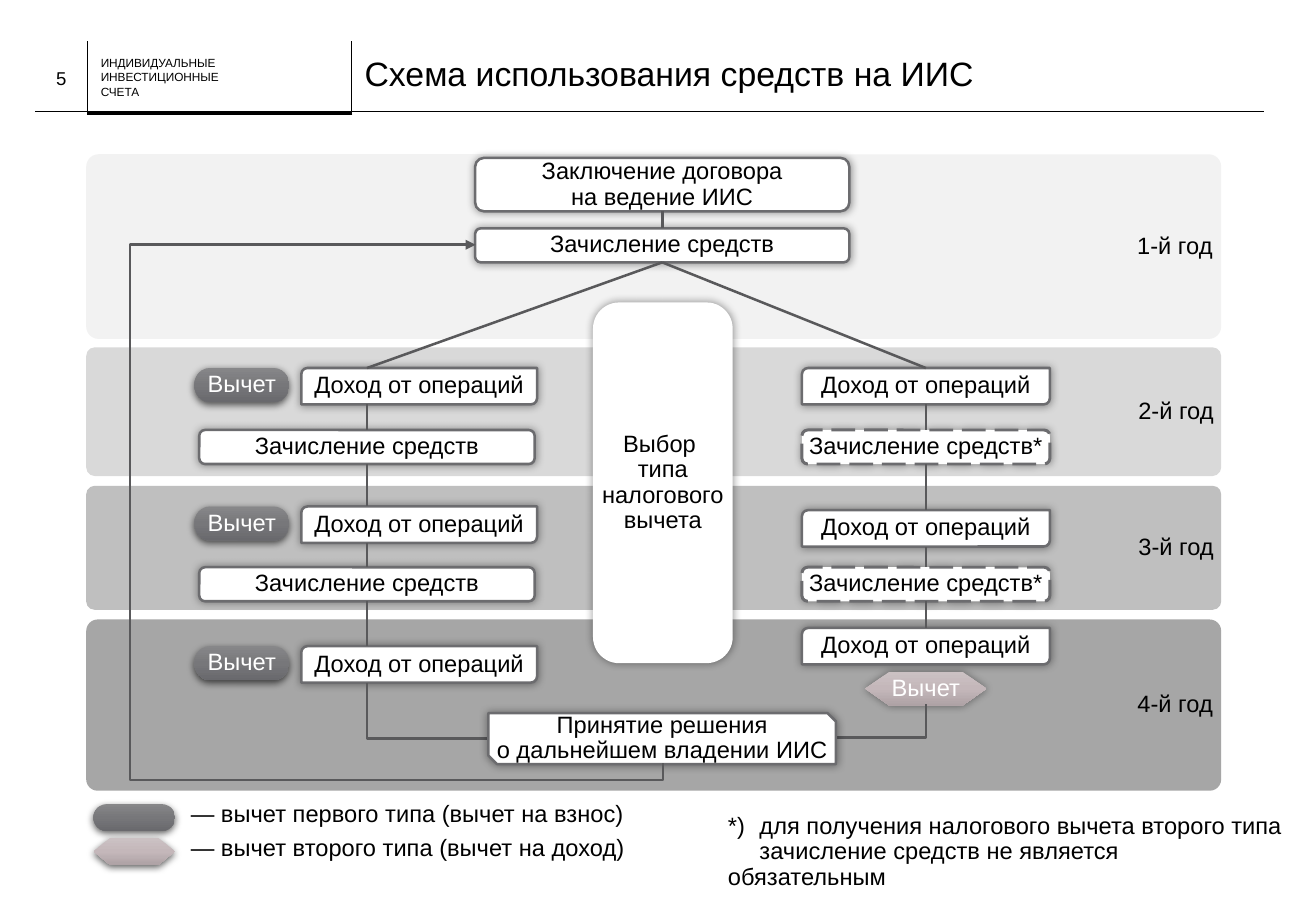
from lxml import etree
from pptx import Presentation
from pptx import util as u
from pptx.dml.color import RGBColor
from pptx.enum import dml, shapes, text
from pptx.oxml.ns import qn

SCALE = 9144
FORM = shapes.MSO_SHAPE
BLACK, WHITE = "000000", "FFFFFF"
BORDER, WIRE = "6C6C6F", "59595B"
FIRST_TYPE = ("878789", "77777A", "69696D")
SECOND_TYPE = ("CBC1C3", "C4B7BA", "AEA2A5")
GLOW = (40, 5, 0, 0)
DROP = (63, 4.5, 1.5, 90)
INCOME, DEPOSIT, DEDUCTION = "Доход от операций", "Зачисление средств", "Вычет"


def px(*lengths):
    """Turn px into EMU."""
    return [u.Emu(length * SCALE) for length in lengths]


def color(hex_code):
    """Return the colour for a hex string."""
    return RGBColor.from_string(hex_code)


def child(parent, tag, **attributes):
    """Append a DrawingML element with the given attributes."""
    values = {key: str(value) for key, value in attributes.items()}
    return etree.SubElement(parent, qn(tag), values)


def write(holder, words, size=14, ink=BLACK, align="CENTER", anchor="MIDDLE",
          spacing=0.9, inset=0, tab=None):
    """Fill a shape with one formatted paragraph."""
    frame = holder.text_frame
    frame.word_wrap = True
    frame.auto_size = text.MSO_AUTO_SIZE.NONE
    frame.vertical_anchor = getattr(text.MSO_ANCHOR, anchor)
    frame.margin_left, frame.margin_right = px(inset, inset)
    frame.margin_top = frame.margin_bottom = 0
    line = frame.paragraphs[0]
    line.text = words
    line.alignment = getattr(text.PP_ALIGN, align)
    line.line_spacing = spacing
    for run in line.runs:
        run.font.size = u.Pt(size)
        run.font.name = "Arial"
        run.font.color.rgb = color(ink)
    for line_break in line._p.findall(qn("a:br")):
        child(line_break, "a:rPr", sz=size * 100)
    if tab:
        stops = child(line._p.get_or_add_pPr(), "a:tabLst")
        child(stops, "a:tab", pos=tab * SCALE, algn="l")


def label(slide, box, words, **style):
    """Add a text box."""
    write(slide.shapes.add_textbox(*px(*box)), words, **style)


def cast_shadow(block, alpha, blur, distance, angle):
    """Give a block an outer shadow."""
    effects = block._element.spPr.find(qn("a:effectLst"))
    outer = child(effects, "a:outerShdw", blurRad=u.Pt(blur), dist=u.Pt(distance),
                  dir=angle * 60000, algn="ctr", rotWithShape=0)
    child(child(outer, "a:srgbClr", val=BLACK), "a:alpha", val=alpha * 1000)


def add_block(slide, form, box, fill=WHITE, border=None, shadow=None, corner=None):
    """Add a preset shape with a plain fill or a vertical gradient."""
    block = slide.shapes.add_shape(form, *px(*box))
    block.shadow.inherit = False
    if corner:
        block.adjustments[0] = corner
    if isinstance(fill, str):
        block.fill.solid()
        block.fill.fore_color.rgb = color(fill)
    else:
        block.fill.gradient()
        block.fill.gradient_angle = 270
        stops = block._element.spPr.find(".//" + qn("a:gsLst"))
        stops.clear()
        for index, shade in enumerate(fill):
            stop = child(stops, "a:gs", pos=index * 50000)
            child(stop, "a:srgbClr", val=shade)
    if border:
        block.line.color.rgb = color(border)
        block.line.width = u.Pt(1.5)
    else:
        block.line.fill.background()
    if shadow:
        cast_shadow(block, *shadow)
    return block


def add_step(slide, form, box, words, dashed=False, inset=0):
    """Add a white outlined step of the scheme."""
    step = add_block(slide, form, box, border=BORDER, shadow=GLOW)
    if dashed:
        step.line.width = u.Pt(1.75)
        step.line.dash_style = dml.MSO_LINE.LONG_DASH
    write(step, words, inset=inset)
    return step


def add_line(slide, ends, ink=WIRE, width=1.5, source=None, target=None,
             kind=shapes.MSO_CONNECTOR.STRAIGHT):
    """Add a connector, joined to the bottom of source and the top of target."""
    wire = slide.shapes.add_connector(kind, *px(*ends))
    wire.line.color.rgb = color(ink)
    wire.line.width = u.Pt(width)
    if source:
        wire.begin_connect(source, 2)
    if target:
        wire.end_connect(target, 0)
    child(wire._element.spPr, "a:effectLst")
    return wire


def add_bend(slide, ends, preset, turn, adjusts=(), arrow=False):
    """Add an elbow connector, its ends given before the turn in degrees."""
    wire = add_line(slide, ends, kind=shapes.MSO_CONNECTOR.ELBOW)
    properties = wire._element.spPr
    properties.find(qn("a:xfrm")).set("rot", str(turn * 60000))
    geometry = properties.find(qn("a:prstGeom"))
    geometry.set("prst", preset)
    guides = geometry.find(qn("a:avLst"))
    for index, value in enumerate(adjusts, 1):
        child(guides, "a:gd", name=f"adj{index}", fmla=f"val {value}")
    if arrow:
        child(properties.find(qn("a:ln")), "a:tailEnd", type="triangle")


def add_header(slide):
    """Set the title, section name, page number and rules."""
    for ends, width in (((72, 92, 29, 92), 0.25), ((290, 93, 72, 93), 2.25),
                        ((1040, 92, 288, 92), 0.25), ((72, 93, 72, 34), 0.25),
                        ((289, 93, 289, 34), 0.25)):
        add_line(slide, ends, ink=BLACK, width=width)
    label(slide, (83, 46, 203, 35), "ИНДИВИДУАЛЬНЫЕ\nИНВЕСТИЦИОННЫЕ\nСЧЕТА",
          size=7, align="LEFT", spacing=1.0)
    label(slide, (29, 44, 43, 40), "5", size=11, spacing=1.0)
    title = slide.shapes.title
    title.left, title.top, title.width, title.height = px(300, 34, 677, 56)
    write(title, "Схема использования средств на ИИС", size=20, align="LEFT")


def add_years(slide):
    """Add the four year bands."""
    bands = ((127, 152, "F2F2F2"), (286, 106, "D9D9D9"),
             (400, 102, "BFBFBF"), (510, 141, "A6A6A6"))
    for year, (top, height, shade) in enumerate(bands, 1):
        band = add_block(slide, FORM.ROUNDED_RECTANGLE, (71, top, 934, height),
                         fill=shade, corner=0.067)
        write(band, f"{year}-й год", align="RIGHT", inset=4)


def add_first_branch(slide, opening):
    """Add the branch with a yearly deduction."""
    deposit = None
    for income_top, deposit_top in ((303, 354), (417, 467), (532, None)):
        badge = add_block(slide, FORM.FLOWCHART_TERMINATOR,
                          (160, income_top, 78, 28), fill=FIRST_TYPE, shadow=DROP)
        write(badge, DEDUCTION, ink=WHITE, inset=2)
        add_step(slide, FORM.ROUND_2_DIAG_RECTANGLE,
                 (248, income_top, 194, 30), INCOME, inset=1)
        add_line(slide, (302, 0, 302, income_top), source=deposit or opening)
        if deposit_top:
            deposit = add_step(slide, FORM.ROUNDED_RECTANGLE,
                               (164, deposit_top, 276, 28), DEPOSIT, inset=2)
            add_line(slide, (302, income_top + 30, 302, 0), target=deposit)
    add_bend(slide, (375, 535, 329, 635), "bentConnector2", 270)


def add_second_branch(slide, opening):
    """Add the branch with one deduction at the end."""
    previous = opening
    for row, top in enumerate((303, 354, 420, 467, 517)):
        if row % 2:
            step = add_step(slide, FORM.ROUNDED_RECTANGLE, (660, top, 204, 28),
                            DEPOSIT + "*", dashed=True, inset=2)
        else:
            step = add_step(slide, FORM.ROUND_2_DIAG_RECTANGLE,
                            (660, top, 204, 30), INCOME, inset=2)
        add_line(slide, (762, 0, 762, top), source=previous, target=step)
        previous = step
    badge = add_block(slide, FORM.FLOWCHART_PREPARATION, (712, 553, 100, 28),
                      fill=SECOND_TYPE, shadow=GLOW)
    write(badge, DEDUCTION, ink=WHITE)
    add_bend(slide, (712, 557, 739, 630), "bentConnector2", 90)


def add_scheme(slide):
    """Add the steps from the contract to the final decision."""
    contract = add_step(slide, FORM.ROUNDED_RECTANGLE, (391, 130, 308, 44),
                        "Заключение договора\nна ведение ИИС", inset=2)
    opening = add_step(slide, FORM.ROUNDED_RECTANGLE, (391, 188, 308, 28),
                       DEPOSIT, inset=2)
    add_line(slide, (545, 174, 545, 188), source=contract, target=opening)
    add_first_branch(slide, opening)
    add_second_branch(slide, opening)
    add_step(slide, FORM.SNIP_2_DIAG_RECTANGLE, (402, 587, 286, 42),
             "Принятие решения\nо дальнейшем владении ИИС")
    add_bend(slide, (682, 338, 255, 492), "bentConnector4", 90,
             adjusts=(-3200, 284700), arrow=True)
    choice = add_block(slide, FORM.ROUNDED_RECTANGLE, (488, 249, 115, 297),
                       shadow=GLOW, corner=0.187)
    write(choice, "Выбор \nтипа налогового вычета")


def add_legend(slide):
    """Add the key to the deductions and the footnote."""
    for top, form, fill, words in (
            (662, FORM.FLOWCHART_TERMINATOR, FIRST_TYPE,
             "— вычет первого типа (вычет на взнос)"),
            (690, FORM.FLOWCHART_PREPARATION, SECOND_TYPE,
             "— вычет второго типа (вычет на доход)")):
        add_block(slide, form, (77, top, 67, 22), fill=fill, shadow=DROP)
        label(slide, (157, top - 4, 848, 24), words, align="LEFT", anchor="TOP",
              spacing=1.0)
    label(slide, (599, 670, 458, 40),
          "*)\tдля получения налогового вычета второго типа\n"
          "\tзачисление средств не является\nобязательным",
          align="LEFT", anchor="TOP", tab=26)


def main():
    """Build and save the slide."""
    deck = Presentation()
    deck.slide_width, deck.slide_height = px(1083, 750)
    slide = deck.slides.add_slide(deck.slide_layouts[5])
    add_header(slide)
    add_years(slide)
    add_scheme(slide)
    add_legend(slide)
    deck.save("out.pptx")


if __name__ == "__main__":
    main()
